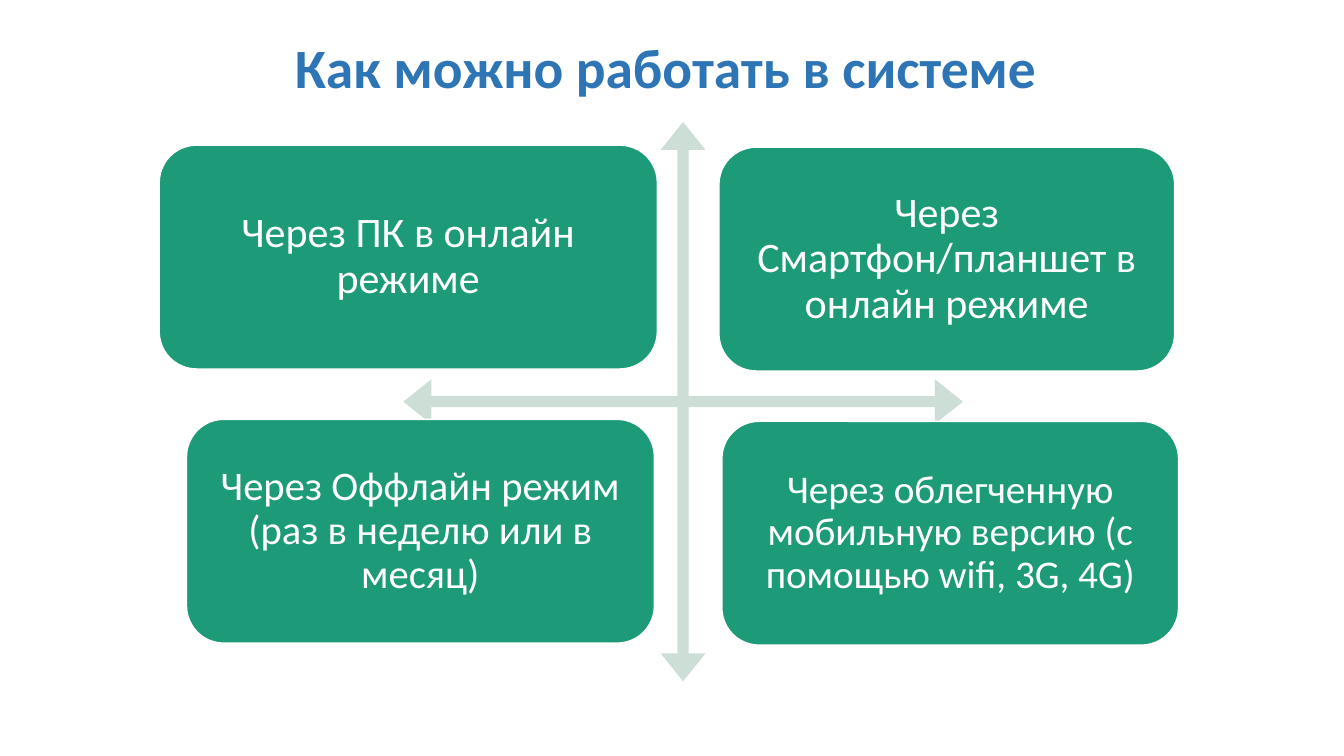
"""Build a slide with four ways of working around a four-way arrow."""
from dataclasses import dataclass

from pptx import Presentation
from pptx.dml.color import RGBColor
from pptx.enum.shapes import MSO_SHAPE as Preset
from pptx.enum.text import MSO_ANCHOR as Anchor, PP_ALIGN as Align
from pptx.shapes.autoshape import Shape
from pptx.slide import Slide
from pptx.util import Inches, Pt

BLUE = RGBColor(0x2E, 0x75, 0xB6)
GREEN = RGBColor(0x1D, 0x9A, 0x78)
PALE_GREEN = RGBColor(0xCD, 0xDE, 0xD6)
WHITE = RGBColor(0xFF, 0xFF, 0xFF)

SLIDE_WIDTH, SLIDE_HEIGHT = Inches(13.33), Inches(7.5)
COLUMNS = ROWS = 100
BOX_ROWS = 29.6
ARROW_ADJUSTMENTS = (0.02, 0.04, 0.05)


@dataclass(frozen=True)
class Area:
    """Place on the slide, in grid columns and rows."""

    column: float
    row: float
    columns: float
    rows: float

    def lengths(self) -> tuple[int, int, int, int]:
        """Return left, top, width and height as slide lengths."""
        across, down = SLIDE_WIDTH / COLUMNS, SLIDE_HEIGHT / ROWS
        return (round(self.column * across), round(self.row * down),
                round(self.columns * across), round(self.rows * down))


@dataclass(frozen=True)
class Way:
    """One way of working in the system."""

    text: str
    area: Area
    size: float


TITLE_AREA = Area(6.9, 5.33, 86.2, 8)
ARROW_AREA = Area(30.01, 16.13, 41.63, 74)
WAYS = (
    Way("Через ПК в онлайн режиме", Area(11.85, 19.2, 37.06, BOX_ROWS), 30),
    Way("Через Смартфон/планшет в онлайн режиме",
        Area(53.49, 19.47, 33.91, BOX_ROWS), 30),
    Way("Через Оффлайн режим (раз в неделю или в месяц)",
        Area(13.88, 55.47, 34.81, BOX_ROWS), 29),
    Way("Через облегченную мобильную версию (с помощью wifi, 3G, 4G)",
        Area(53.71, 55.73, 33.98, BOX_ROWS), 28),
)


def write(box: Shape, text: str, size: float, color: RGBColor, bold: bool = False) -> None:
    """Write one centred paragraph into a box."""
    frame = box.text_frame
    frame.word_wrap = True
    frame.vertical_anchor = Anchor.MIDDLE
    para = frame.paragraphs[0]
    para.alignment = Align.CENTER
    para.line_spacing = 0.9
    span = para.add_run()
    span.text = text
    span.font.color.rgb = color
    for name, value in {"name": "Calibri", "size": Pt(size), "bold": bold}.items():
        setattr(span.font, name, value)


def add_filled(page: Slide, preset: Preset, area: Area, color: RGBColor) -> Shape:
    """Add a preset shape with a flat fill and no outline."""
    shape = page.shapes.add_shape(preset, *area.lengths())
    shape.shadow.inherit = False
    shape.fill.solid()
    shape.fill.fore_color.rgb = color
    shape.line.fill.background()
    return shape


def add_title(page: Slide) -> None:
    """Add the slide heading."""
    box = page.shapes.add_textbox(*TITLE_AREA.lengths())
    write(box, "Как можно работать в системе ", 39.6, BLUE, bold=True)


def add_arrow(page: Slide) -> None:
    """Add the four-way arrow between the boxes."""
    arrow = add_filled(page, Preset.QUAD_ARROW, ARROW_AREA, PALE_GREEN)
    for index, share in enumerate(ARROW_ADJUSTMENTS):
        arrow.adjustments[index] = share


def add_way(page: Slide, way: Way) -> None:
    """Add the rounded box of one way of working."""
    box = add_filled(page, Preset.ROUNDED_RECTANGLE, way.area, GREEN)
    box.line.color.rgb = WHITE
    box.line.width = Pt(1)
    for side in ("left", "top", "right", "bottom"):
        setattr(box.text_frame, f"margin_{side}", Inches(0.12))
    write(box, way.text, way.size, WHITE)


def main() -> None:
    """Build the deck and save it."""
    deck = Presentation()
    deck.slide_width, deck.slide_height = SLIDE_WIDTH, SLIDE_HEIGHT
    page = deck.slides.add_slide(deck.slide_layouts[6])
    add_title(page)
    add_arrow(page)
    for way in WAYS:
        add_way(page, way)
    deck.save("out.pptx")


if __name__ == "__main__":
    main()
